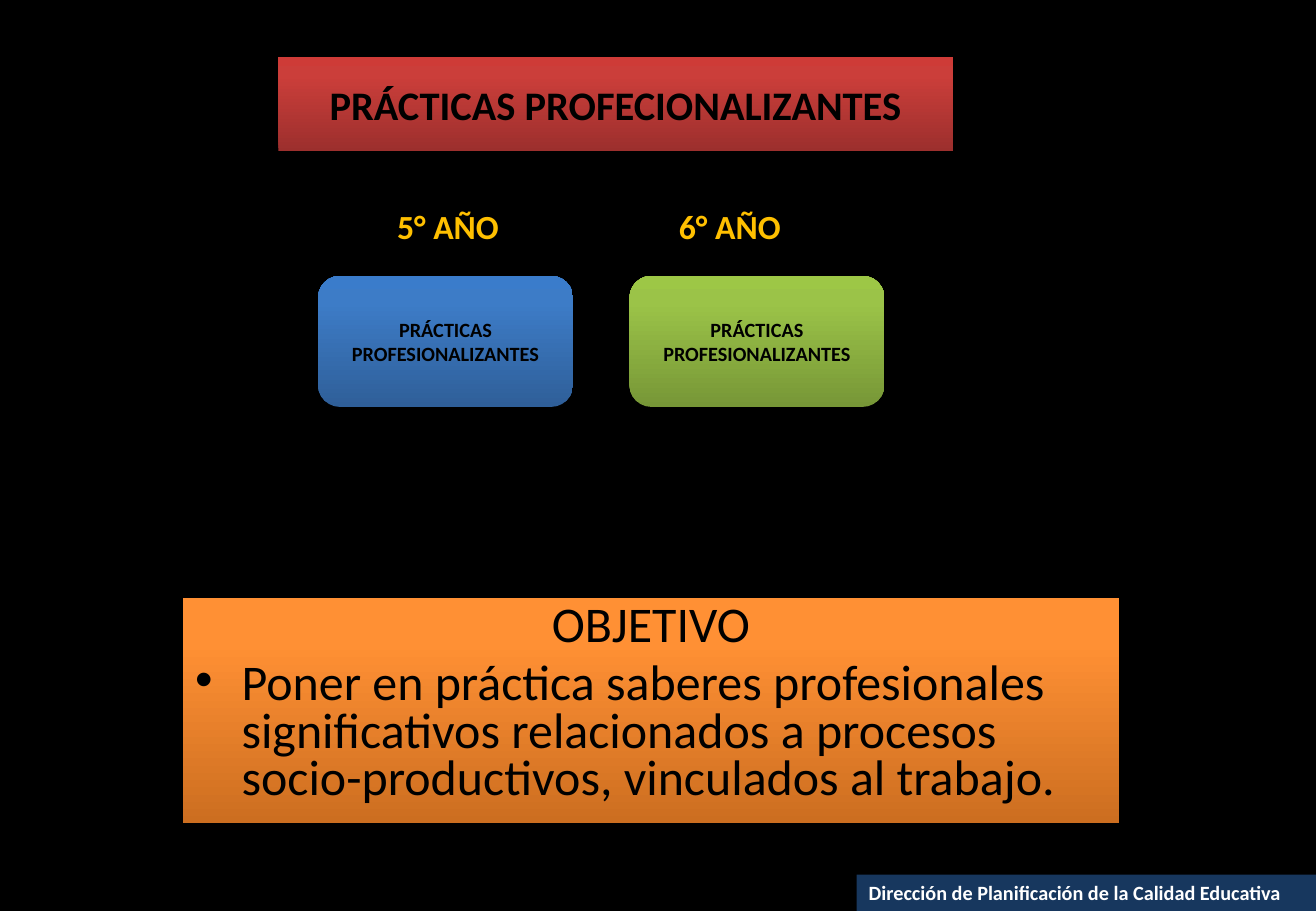
from copy import deepcopy

from lxml import etree
from pptx import Presentation
from pptx.dml.color import RGBColor
from pptx.enum.shapes import MSO_SHAPE
from pptx.enum.text import MSO_ANCHOR, PP_ALIGN
from pptx.oxml.ns import qn
from pptx.util import Cm, Pt

RECT, ROUNDED = MSO_SHAPE.RECTANGLE, MSO_SHAPE.ROUNDED_RECTANGLE
TOP, MIDDLE = MSO_ANCHOR.TOP, MSO_ANCHOR.MIDDLE
LEFT, CENTER = PP_ALIGN.LEFT, PP_ALIGN.CENTER

BLACK = RGBColor(0x00, 0x00, 0x00)
WHITE = RGBColor(0xFF, 0xFF, 0xFF)
GOLD = RGBColor(0xFF, 0xC0, 0x00)
NAVY = RGBColor(0x17, 0x37, 0x5E)
# Gradients run from the bottom edge to the top edge
RED = (RGBColor(0x9C, 0x2F, 0x2D), RGBColor(0xCB, 0x3E, 0x3A), RGBColor(0xCE, 0x3B, 0x37))
BLUE = (RGBColor(0x2F, 0x5F, 0x99), RGBColor(0x3D, 0x7C, 0xC7), RGBColor(0x3A, 0x7C, 0xCB))
GREEN = (RGBColor(0x77, 0x97, 0x37), RGBColor(0x9B, 0xC3, 0x48), RGBColor(0x9D, 0xC7, 0x46))
ORANGE = (RGBColor(0xCC, 0x6E, 0x20), RGBColor(0xFF, 0x90, 0x34), RGBColor(0xFF, 0x91, 0x36))
GRADIENT_POSITIONS = (0, 0.8, 1)

FONT = "Calibri"
TITLE = "PRÁCTICAS PROFECIONALIZANTES"
PRACTICE = "PRÁCTICAS PROFESIONALIZANTES"
YEARS = [  # label, label left, box left (cm), box gradient
    ("5° AÑO", 8.05, 6.65, BLUE),
    ("6° AÑO", 13.94, 13.16, GREEN),
]
OBJECTIVE_HEADING = "OBJETIVO"
OBJECTIVE = ("Poner en práctica saberes profesionales significativos relacionados "
             "a procesos socio-productivos, vinculados al trabajo.")
FOOTER = "Dirección de Planificación de la Calidad Educativa"

SLIDE_W, SLIDE_H = 27.51, 19.05
FOOTER_W, FOOTER_H = 9.6, 0.76


def write(paragraph, text, size, color=BLACK, bold=True, align=CENTER):
    paragraph.text = text
    paragraph.alignment = align
    font = paragraph.font
    font.name, font.size, font.bold = FONT, Pt(size), bold
    font.color.rgb = color


def fill_gradient(shape, colors):
    shape.fill.gradient()
    shape.fill.gradient_angle = 90
    stop_list = shape._element.spPr.find(qn("a:gradFill")).find(qn("a:gsLst"))
    stop_list.append(deepcopy(stop_list[-1]))
    for stop, position, color in zip(shape.fill.gradient_stops, GRADIENT_POSITIONS, colors):
        stop.position = position
        stop.color.rgb = color


def add_panel(slide, kind, box, fill, anchor=MIDDLE):
    """Add a borderless shape with a plain or gradient fill; return its text frame."""
    shape = slide.shapes.add_shape(kind, *map(Cm, box))
    shape.shadow.inherit = False
    shape.line.fill.background()
    if isinstance(fill, RGBColor):
        shape.fill.solid()
        shape.fill.fore_color.rgb = fill
    else:
        fill_gradient(shape, fill)
    frame = shape.text_frame
    frame.word_wrap = True
    frame.vertical_anchor = anchor
    return frame


def set_hanging_indent(paragraph, bullet=None):
    properties = paragraph._p.get_or_add_pPr()
    indent = Cm(0.97)
    properties.set("marL", str(indent))
    properties.set("indent", str(-indent))
    if bullet:
        etree.SubElement(properties, qn("a:buFont"), typeface="Arial")
        etree.SubElement(properties, qn("a:buChar"), char=bullet)


def add_objective(slide):
    frame = add_panel(slide, RECT, (3.83, 12.5, 19.56, 4.72), ORANGE, TOP)
    heading, body = frame.paragraphs[0], frame.add_paragraph()
    set_hanging_indent(heading)
    set_hanging_indent(body, "•")
    write(heading, OBJECTIVE_HEADING, 29.6, bold=False)
    write(body, OBJECTIVE, 29.6, bold=False, align=LEFT)
    heading.line_spacing = body.line_spacing = 0.8
    body.space_before = Pt(6)


def main():
    prs = Presentation()
    prs.slide_width, prs.slide_height = Cm(SLIDE_W), Cm(SLIDE_H)
    slide = prs.slides.add_slide(prs.slide_layouts[6])
    slide.background.fill.solid()
    slide.background.fill.fore_color.rgb = BLACK

    title = add_panel(slide, RECT, (5.82, 1.19, 14.1, 1.98), RED)
    write(title.paragraphs[0], TITLE, 24)

    for year, label_left, box_left, gradient in YEARS:
        label = slide.shapes.add_textbox(Cm(label_left), Cm(4.17), Cm(3.73), Cm(1.12)).text_frame
        label.word_wrap = True
        write(label.paragraphs[0], year, 20, GOLD, align=LEFT)
        practice = add_panel(slide, ROUNDED, (box_left, 5.77, 5.33, 2.74), gradient)
        write(practice.paragraphs[0], PRACTICE, 12)

    add_objective(slide)

    footer_box = (SLIDE_W - FOOTER_W, SLIDE_H - FOOTER_H, FOOTER_W, FOOTER_H)
    footer = add_panel(slide, RECT, footer_box, NAVY, TOP)
    write(footer.paragraphs[0], FOOTER, 12, WHITE, align=LEFT)

    prs.save("out.pptx")


if __name__ == "__main__":
    main()
